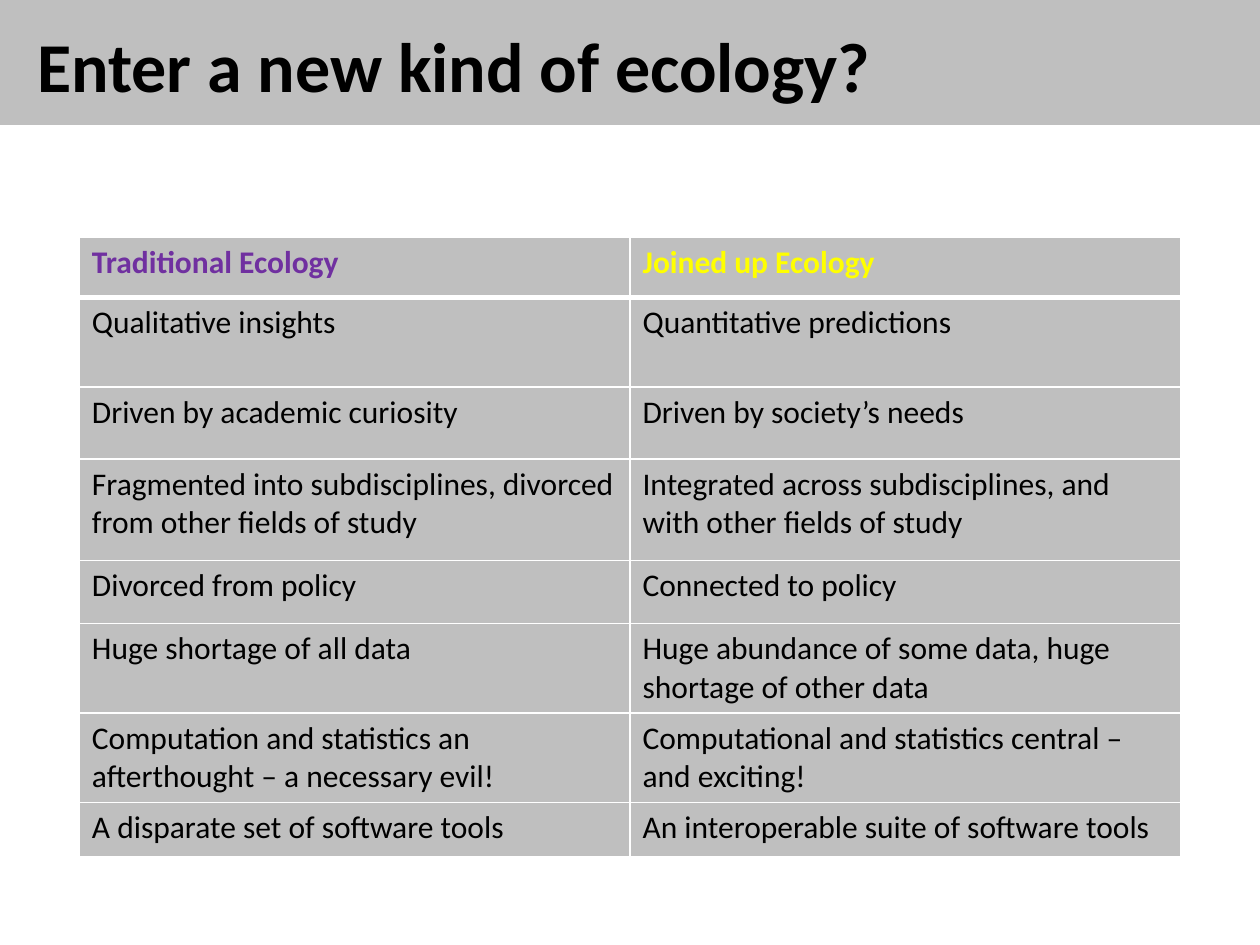
from lxml import etree
from pptx import Presentation
from pptx.dml.color import RGBColor
from pptx.enum.shapes import MSO_SHAPE
from pptx.enum.text import MSO_ANCHOR, PP_ALIGN
from pptx.oxml.ns import qn
from pptx.util import Cm, Pt

RECT = MSO_SHAPE.RECTANGLE
LEFT = PP_ALIGN.LEFT
TOP, MIDDLE = MSO_ANCHOR.TOP, MSO_ANCHOR.MIDDLE

GREY = RGBColor(0xBF, 0xBF, 0xBF)
BLACK = RGBColor(0x00, 0x00, 0x00)
WHITE = RGBColor(0xFF, 0xFF, 0xFF)
PURPLE = RGBColor(0x70, 0x30, 0xA0)
YELLOW = RGBColor(0xFF, 0xFF, 0x00)

FONT = "Calibri"
TITLE_ONLY = 5
THIN, THICK = 1, 3

HEADER_COLORS = [PURPLE, YELLOW]
COLUMN_WIDTH = 11.1
# Height in cm, traditional ecology, joined up ecology
ROWS = [
    (1.22, "Traditional Ecology", "Joined up Ecology"),
    (1.8, "Qualitative insights", "Quantitative predictions"),
    (1.45, "Driven by academic curiosity", "Driven by society’s needs"),
    (2.05, "Fragmented into subdisciplines, divorced from other fields of study",
     "Integrated across subdisciplines, and with other fields of study"),
    (1.27, "Divorced from policy", "Connected to policy"),
    (1.8, "Huge shortage of all data",
     "Huge abundance of some data, huge shortage of other data"),
    (1.8, "Computation and statistics an afterthought – a necessary evil!",
     "Computational and statistics central – and exciting!"),
    (1.09, "A disparate set of software tools",
     "An interoperable suite of software tools"),
]


def write(tf, text, size=18, color=BLACK, bold=False):
    p = tf.paragraphs[0]
    p.alignment = LEFT
    r = p.add_run()
    r.text = text
    r.font.name = FONT
    r.font.size = Pt(size)
    r.font.bold = bold
    r.font.color.rgb = color


def add_band(s):
    """Draw the grey strip behind the title."""
    band = s.shapes.add_shape(RECT, 0, 0, Cm(25.4), Cm(2.52))
    band.shadow.inherit = False
    band.fill.solid()
    band.fill.fore_color.rgb = GREY
    band.line.fill.background()
    s.shapes.title._element.addprevious(band._element)


def add_title(s, text):
    title = s.shapes.title
    title.left, title.top = Cm(0.5), Cm(0.33)
    title.width, title.height = Cm(21.6), Cm(1.96)
    tf = title.text_frame
    tf.word_wrap = True
    tf.vertical_anchor = MIDDLE
    write(tf, text, size=40, bold=True)


def set_borders(cell, top, bottom):
    """Add white cell borders; top and bottom are widths in points."""
    tc_pr = cell._tc.get_or_add_tcPr()
    sides = [("lnL", THIN), ("lnR", THIN), ("lnT", top), ("lnB", bottom)]
    for i, (side, width) in enumerate(sides):
        ln = etree.Element(qn(f"a:{side}"), w=str(Pt(width)))
        fill = etree.SubElement(ln, qn("a:solidFill"))
        etree.SubElement(fill, qn("a:srgbClr"), val=str(WHITE))
        tc_pr.insert(i, ln)


def add_comparison(s):
    heights = [Cm(height) for height, *_ in ROWS]
    frame = s.shapes.add_table(len(ROWS), 2, Cm(1.6), Cm(4.78),
                               Cm(2 * COLUMN_WIDTH), sum(heights))
    table = frame.table
    table.horz_banding = False
    for column in table.columns:
        column.width = Cm(COLUMN_WIDTH)
    for i, (_, *texts) in enumerate(ROWS):
        table.rows[i].height = heights[i]
        header = i == 0
        for j, text in enumerate(texts):
            cell = table.cell(i, j)
            cell.vertical_anchor = TOP
            cell.fill.solid()
            cell.fill.fore_color.rgb = GREY
            set_borders(cell, top=THICK if i == 1 else THIN,
                        bottom=THICK if header else THIN)
            write(cell.text_frame, text, bold=header,
                  color=HEADER_COLORS[j] if header else BLACK)


def main():
    prs = Presentation()
    prs.slide_width, prs.slide_height = Cm(25.4), Cm(19.05)
    s = prs.slides.add_slide(prs.slide_layouts[TITLE_ONLY])
    add_band(s)
    add_title(s, "Enter a new kind of ecology?")
    add_comparison(s)
    prs.save("out.pptx")


if __name__ == "__main__":
    main()
